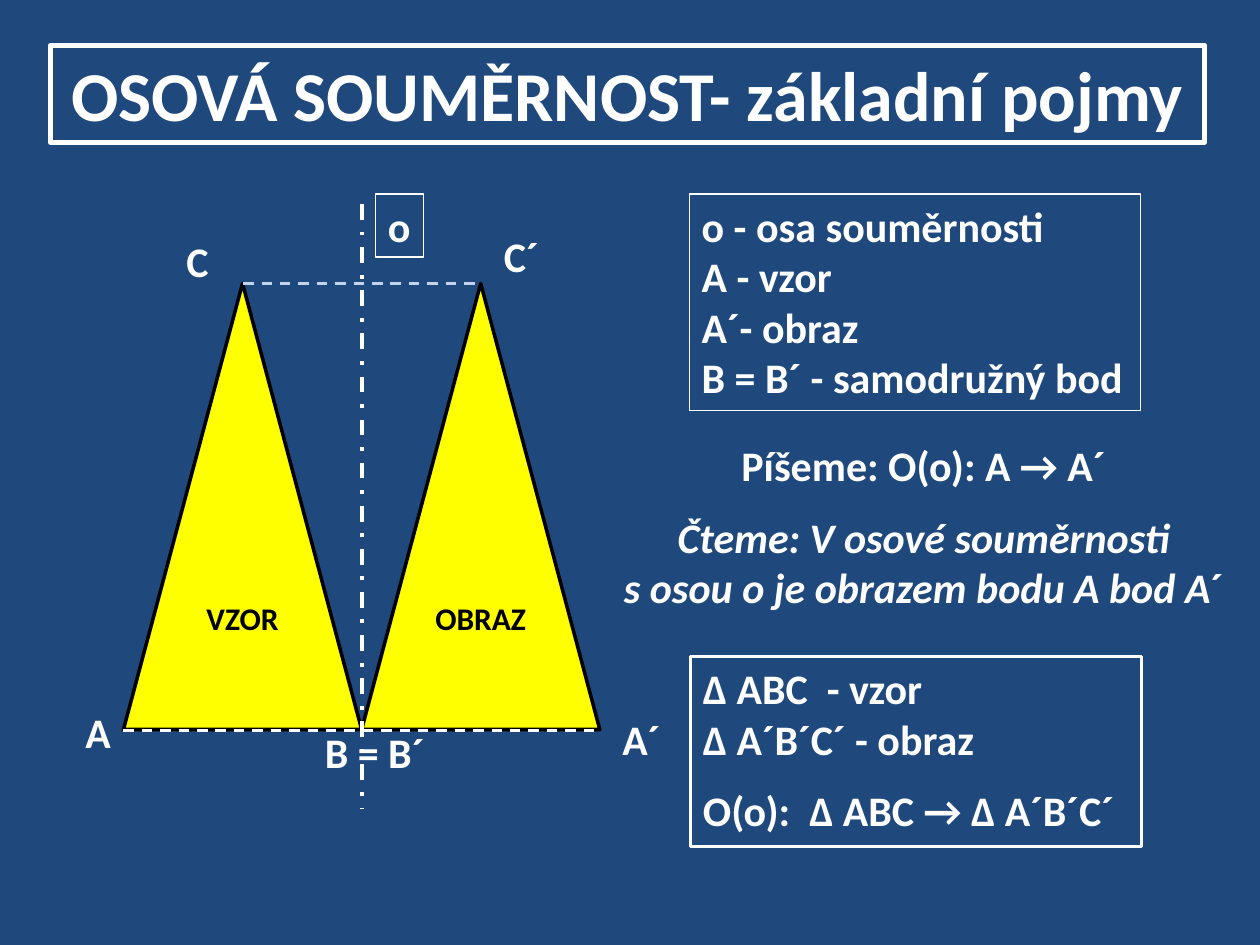
"""Build a slide on the basic terms of axial symmetry."""
from dataclasses import dataclass
from typing import Optional

from lxml import etree
from pptx import Presentation
from pptx import util as u
from pptx.dml.color import RGBColor
from pptx.enum import dml, shapes, text
from pptx.oxml.ns import qn

PX = 9144
FONT = "Calibri"
NAVY = RGBColor(0x1F, 0x49, 0x7D)
WHITE = RGBColor(0xFF, 0xFF, 0xFF)
BLACK = RGBColor(0x00, 0x00, 0x00)
YELLOW = RGBColor(0xFF, 0xFF, 0x00)
PALE_BLUE = RGBColor(0xC1, 0xD4, 0xEC)

AXIS_X, BASE_Y, APEX_Y, SIDE = 287, 579, 225, 189


@dataclass(frozen=True)
class Run:
    text: str
    italic: bool = False


@dataclass(frozen=True)
class Para:
    runs: tuple[Run, ...]
    before: float = 0


@dataclass(frozen=True)
class Box:
    x: int
    y: int
    w: int
    h: int
    paras: tuple[Para, ...]
    border: Optional[float] = None
    size: int = 24
    centred: bool = False
    wrap: bool = False


@dataclass(frozen=True)
class Triangle:
    x: int
    label: str


@dataclass(frozen=True)
class Line:
    x1: int
    y1: int
    x2: int
    y2: int
    color: RGBColor
    width: float
    dash: dml.MSO_LINE


def px(n: int) -> u.Emu:
    return u.Emu(n * PX)


def lines(*texts: str) -> tuple[Para, ...]:
    return tuple(Para((Run(t),)) for t in texts)


TRIANGLES = (Triangle(AXIS_X - SIDE, "VZOR"), Triangle(AXIS_X, "OBRAZ"))

LINES = (
    Line(AXIS_X, 162, AXIS_X, 642, WHITE, 2.25, dml.MSO_LINE.DASH_DOT),
    Line(AXIS_X - SIDE, BASE_Y + 1, AXIS_X + SIDE, BASE_Y + 1, WHITE, 1.5,
         dml.MSO_LINE.DASH),
    Line(AXIS_X - SIDE // 2, APEX_Y, AXIS_X + SIDE // 2 + 1, APEX_Y, PALE_BLUE, 1.5,
         dml.MSO_LINE.DASH),
)

BOXES = (
    Box(58, 556, 41, 50, lines("A")),
    Box(248, 572, 100, 50, lines("B = B´")),
    Box(138, 182, 38, 50, lines("C")),
    Box(484, 561, 51, 50, lines("A´")),
    Box(390, 178, 48, 50, lines("C´")),
    Box(298, 154, 38, 50, lines("o"), border=0.75),
    Box(40, 36, 916, 77, lines("OSOVÁ SOUMĚRNOST- základní pojmy"),
        border=3, size=40, centred=True),
    Box(482, 344, 502, 148, (
        Para((Run("Píšeme: O(o): A → A´"),)),
        Para((Run("Čteme: V osové souměrnosti\ns osou o je obrazem bodu A bod A", True),
              Run("´")), before=12),
    ), centred=True, wrap=True),
    Box(548, 521, 358, 151,
        lines("Δ ABC  - vzor", "Δ A´B´C´ - obraz")
        + (Para((Run("O(o):  Δ ABC → Δ A´B´C´"),), before=12),),
        border=1.5, wrap=True),
    Box(547, 154, 358, 172,
        lines("o - osa souměrnosti", "A - vzor", "A´- obraz", "B = B´ - samodružný bod"),
        border=0.75),
)


def write(tf, paras: tuple[Para, ...], size: int, color: RGBColor, centred: bool) -> None:
    for i, para in enumerate(paras):
        p = tf.paragraphs[0] if i == 0 else tf.add_paragraph()
        p.alignment = text.PP_ALIGN.CENTER if centred else text.PP_ALIGN.LEFT
        p.space_before = u.Pt(para.before)
        for run in para.runs:
            for j, part in enumerate(run.text.split("\n")):
                if j:
                    p.add_line_break()
                r = p.add_run()
                r.text = part
                r.font.name = FONT
                r.font.size = u.Pt(size)
                r.font.bold = True
                r.font.italic = run.italic
                r.font.color.rgb = color


def draw_triangle(s, tri: Triangle) -> None:
    sp = s.shapes.add_shape(shapes.MSO_SHAPE.ISOSCELES_TRIANGLE,
                            px(tri.x), px(APEX_Y), px(SIDE), px(BASE_Y - APEX_Y))
    sp.shadow.inherit = False
    sp.fill.solid()
    sp.fill.fore_color.rgb = YELLOW
    sp.line.color.rgb = BLACK
    sp.line.width = u.Pt(2)
    tf = sp.text_frame
    tf.word_wrap = False
    tf.vertical_anchor = text.MSO_ANCHOR.MIDDLE
    write(tf, lines(tri.label), 18, BLACK, True)


def draw_line(s, line: Line) -> None:
    cx = s.shapes.add_connector(shapes.MSO_CONNECTOR.STRAIGHT,
                                px(line.x1), px(line.y1), px(line.x2), px(line.y2))
    cx.line.color.rgb = line.color
    cx.line.width = u.Pt(line.width)
    cx.line.dash_style = line.dash
    etree.SubElement(cx._element.spPr, qn("a:effectLst"))


def draw_box(s, box: Box) -> None:
    sp = s.shapes.add_textbox(px(box.x), px(box.y), px(box.w), px(box.h))
    if box.border:
        sp.line.color.rgb = WHITE
        sp.line.width = u.Pt(box.border)
    tf = sp.text_frame
    tf.word_wrap = box.wrap
    tf.auto_size = text.MSO_AUTO_SIZE.SHAPE_TO_FIT_TEXT
    write(tf, box.paras, box.size, WHITE, box.centred)


def main() -> None:
    prs = Presentation()
    prs.slide_width, prs.slide_height = px(1000), px(750)
    s = prs.slides.add_slide(prs.slide_layouts[6])
    s.background.fill.solid()
    s.background.fill.fore_color.rgb = NAVY
    for tri in TRIANGLES:
        draw_triangle(s, tri)
    for line in LINES:
        draw_line(s, line)
    for box in BOXES:
        draw_box(s, box)
    prs.save("out.pptx")


if __name__ == "__main__":
    main()
